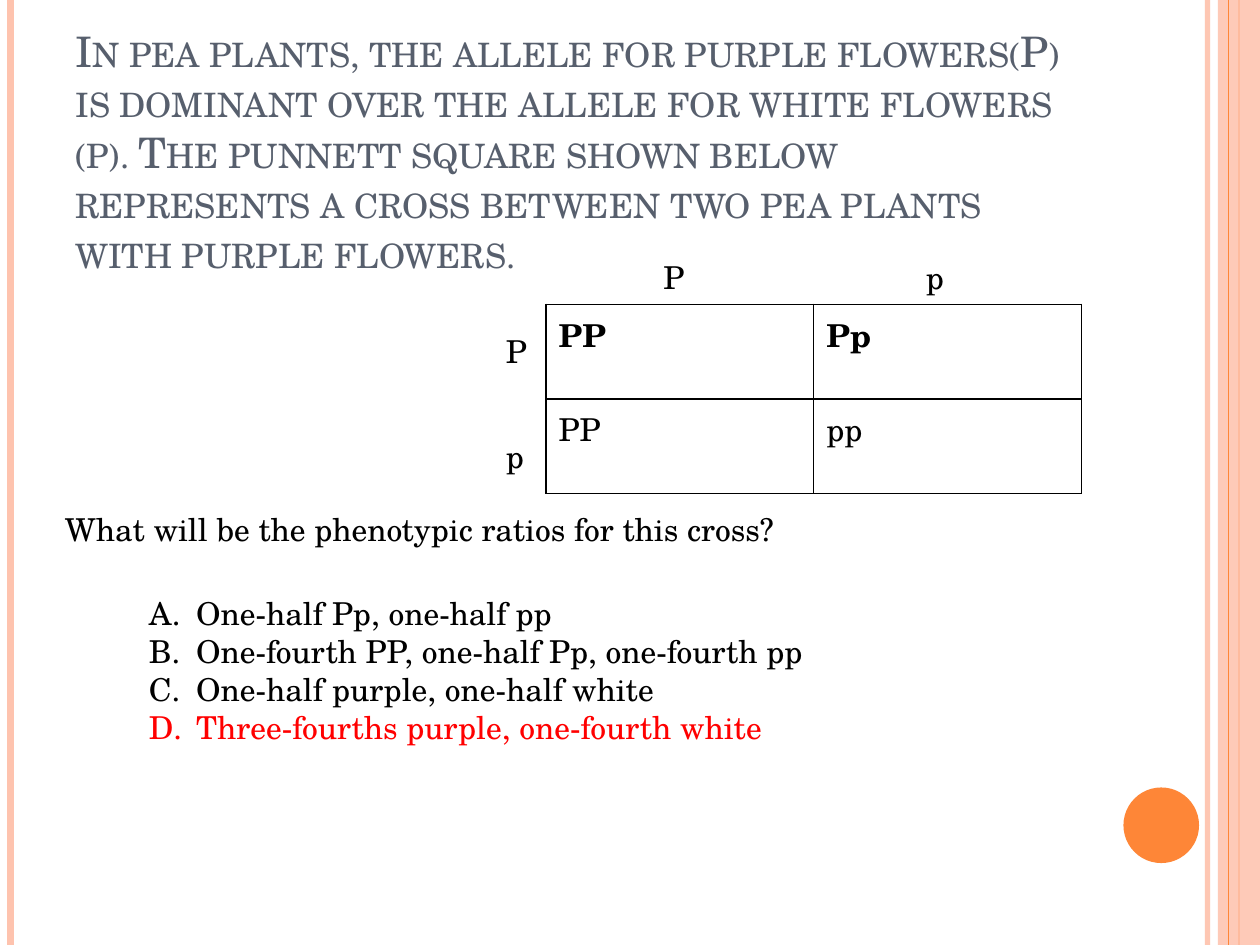
from dataclasses import dataclass

from lxml.etree import SubElement
from pptx import Presentation
from pptx.dml.color import RGBColor
from pptx.enum.shapes import MSO_CONNECTOR, MSO_SHAPE
from pptx.enum.text import MSO_ANCHOR, MSO_AUTO_SIZE
from pptx.oxml.ns import qn
from pptx.util import Pt

COLORS = {"peach": "FEC3AE", "orange": "FE8637", "slate": "575F6D",
          "ink": "000000", "answer": "FF0000", "paper": "FFFFFF"}
FONT = "TeX Gyre Schola"
FRAME = {"word_wrap": False, "auto_size": MSO_AUTO_SIZE.SHAPE_TO_FIT_TEXT}
TITLE_FRAME = {"word_wrap": True, "auto_size": MSO_AUTO_SIZE.NONE,
               "vertical_anchor": MSO_ANCHOR.BOTTOM}
BODY = {"name": FONT, "size": Pt(18), "bold": False}
TITLE = BODY | {"size": Pt(24)}
GENOTYPES = (("PP", "Pp"), ("PP", "pp"))


@dataclass(frozen=True)
class Rule:
    x: float
    color: str
    weight: float
    opacity: int = 100


@dataclass(frozen=True)
class Label:
    text: str
    left: float
    top: float
    width: float
    height: float = 29


@dataclass(frozen=True)
class Answer:
    text: str
    color: str = "ink"


OUTER_RULES = (Rule(690, "peach", 3, 93), Rule(6, "peach", 4.5))
BAND_AXIS = Rule(708, "orange", 1.5)
BAND_RULE = Rule(702, "orange", 0.75)
LABELS = (
    Label("P", 372, 144, 26.5), Label("p", 522, 144, 25.5),
    Label("P", 282, 186, 26.5), Label("p", 282, 246, 25.5),
    Label("What will be the phenotypic ratios for this cross?", 30, 288, 425),
)
ANSWERS = (
    Answer("One-half Pp, one-half pp"),
    Answer("One-fourth PP, one-half Pp, one-fourth pp"),
    Answer("One-half purple, one-half white"),
    Answer("Three-fourths purple, one-fourth white", "answer"),
)
QUESTION = ("In pea plants, the allele for purple flowers(P) is dominant over the "
            "allele for white flowers (p). The punnett square shown below represents "
            "a cross between two pea plants with purple flowers.")


def apply(target, values: dict) -> None:
    """Set each named attribute on the target."""
    for name, value in values.items():
        setattr(target, name, value)


def paint(fill, color: str, opacity: int = 100) -> None:
    """Fill with a solid colour at the given opacity."""
    fill.solid()
    fill.fore_color.rgb = RGBColor.from_string(COLORS[color])
    if opacity < 100:
        tint = fill.fore_color._xFill[0]
        SubElement(tint, qn("a:alpha"), val=str(opacity * 1000))


def write(para, text: str, color: str, values: dict):
    """Add a formatted span to a paragraph."""
    span = para.add_run()
    span.text = text
    apply(span.font, values)
    span.font.color.rgb = RGBColor.from_string(COLORS[color])
    return span


def add_rule(page, rule: Rule):
    """Draw a full-height vertical line."""
    line = page.shapes.add_connector(
        MSO_CONNECTOR.STRAIGHT, Pt(rule.x), 0, Pt(rule.x), Pt(540))
    line.line.width = Pt(rule.weight)
    paint(line.line.fill, rule.color, rule.opacity)
    SubElement(line._element.spPr, qn("a:effectLst"))
    return line


def add_solid(page, kind, bounds: tuple, color: str, opacity: int = 100):
    """Draw a filled preset shape without outline or shadow."""
    shape = page.shapes.add_shape(kind, *map(Pt, bounds))
    shape.shadow.inherit = False
    shape.line.fill.background()
    paint(shape.fill, color, opacity)
    return shape


def add_box(page, bounds: tuple, frame: dict):
    """Add an empty text box and return its text frame."""
    box = page.shapes.add_textbox(*map(Pt, bounds))
    apply(box.text_frame, frame)
    return box.text_frame


def add_decoration(page) -> None:
    """Draw the edge lines, the right band and the disc."""
    for rule in OUTER_RULES:
        add_rule(page, rule)
    axis = add_rule(page, BAND_AXIS)
    band = add_solid(page, MSO_SHAPE.RECTANGLE, (696, 0, 24, 540), "peach", 87)
    axis.begin_connect(band, 0)
    axis.end_connect(band, 2)
    add_rule(page, BAND_RULE)
    add_solid(page, MSO_SHAPE.OVAL, (642, 450, 43.2, 43.2), "orange")


def add_title(page) -> None:
    """Add the question stem in small capitals."""
    frame = add_box(page, (36, 72, 588, 90), TITLE_FRAME)
    span = write(frame.paragraphs[0], QUESTION, "slate", TITLE)
    span.font._element.set("cap", "small")


def add_punnett_square(page) -> None:
    """Add the bordered table of genotypes."""
    table = page.shapes.add_table(2, 2, Pt(312), Pt(174), Pt(306), Pt(108)).table
    apply(table, {"first_row": False, "horz_banding": False})
    for row, genotypes in enumerate(GENOTYPES):
        for column, genotype in enumerate(genotypes):
            cell = table.cell(row, column)
            write(cell.text_frame.paragraphs[0], genotype, "ink",
                  BODY | {"bold": row == 0})
            properties = cell._tc.get_or_add_tcPr()
            for side in ("a:lnL", "a:lnR", "a:lnT", "a:lnB"):
                border = SubElement(properties, qn(side), w=str(Pt(1)))
                fill = SubElement(border, qn("a:solidFill"))
                SubElement(fill, qn("a:srgbClr"), val=COLORS["ink"])
            cell.fill.background()


def add_answers(page) -> None:
    """Add the lettered answers with a hanging indent."""
    frame = add_box(page, (78, 336, 394, 94.5), FRAME)
    for index, answer in enumerate(ANSWERS):
        para = frame.add_paragraph() if index else frame.paragraphs[0]
        write(para, answer.text, answer.color, BODY)
        properties = para._p.get_or_add_pPr()
        properties.set("marL", str(Pt(27)))
        properties.set("indent", str(-Pt(27)))
        SubElement(properties, qn("a:buAutoNum"), type="alphaUcPeriod")


def main() -> None:
    """Build and save the deck."""
    deck = Presentation()
    apply(deck, {"slide_width": Pt(720), "slide_height": Pt(540)})
    page = deck.slides.add_slide(deck.slide_layouts[6])
    paint(page.background.fill, "paper")
    add_decoration(page)
    add_title(page)
    add_punnett_square(page)
    for label in LABELS:
        bounds = (label.left, label.top, label.width, label.height)
        frame = add_box(page, bounds, FRAME)
        write(frame.paragraphs[0], label.text, "ink", BODY)
    add_answers(page)
    deck.save("out.pptx")


if __name__ == "__main__":
    main()
